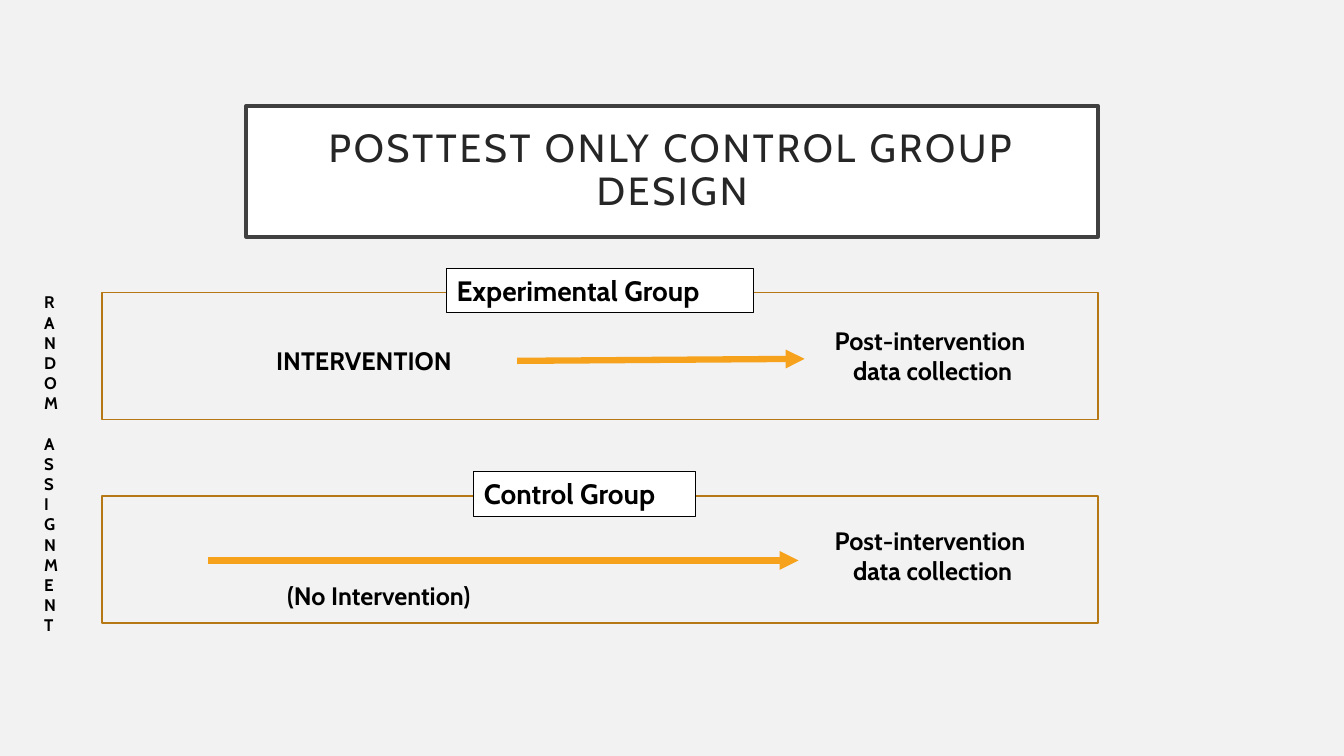
from lxml.etree import SubElement
from pptx import Presentation
from pptx.dml.color import RGBColor
from pptx.enum.shapes import MSO_CONNECTOR, MSO_SHAPE
from pptx.enum.text import MSO_ANCHOR, MSO_AUTO_SIZE, PP_ALIGN
from pptx.oxml.ns import qn
from pptx.util import Inches, Pt

BODY = {"name": "Cabin", "size": Pt(18), "bold": True}
LABEL = {**BODY, "size": Pt(20)}
SIDE = {**BODY, "size": Pt(12)}
TITLE = {"name": "Cabin", "size": Pt(28), "bold": False}


def color(value):
    return RGBColor.from_string(value)


def style_text(paragraph, formats, text_color="000000"):
    for run in paragraph.runs:
        for name, value in formats.items():
            setattr(run.font, name, value)
        run.font.color.rgb = color(text_color)


def style_shape(shape, fill, line, width):
    if fill:
        shape.fill.solid()
        shape.fill.fore_color.rgb = color(fill)
    else:
        shape.fill.background()
    shape.line.color.rgb = color(line)
    shape.line.width = Pt(width)
    shape.shadow.inherit = False


def write_lines(shape, lines, formats):
    frame = shape.text_frame
    frame.word_wrap = True
    frame.vertical_anchor = MSO_ANCHOR.TOP
    frame.text = "\n".join(lines)
    for paragraph in frame.paragraphs:
        paragraph.alignment = PP_ALIGN.LEFT
        style_text(paragraph, formats)
    return frame


def add_text(slide, box, lines, formats=BODY):
    shape = slide.shapes.add_textbox(*map(Inches, box))
    return write_lines(shape, lines, formats)


def add_rectangle(slide, box, fill, line, width):
    shape = slide.shapes.add_shape(MSO_SHAPE.RECTANGLE, *map(Inches, box))
    style_shape(shape, fill, line, width)
    return shape


def add_arrow(slide, start, end):
    arrow = slide.shapes.add_connector(
        MSO_CONNECTOR.STRAIGHT, *map(Inches, start + end))
    arrow.line.color.rgb = color("F6A21D")
    arrow.line.width = Pt(4.5)
    SubElement(arrow.line._get_or_add_ln(), qn("a:tailEnd"), type="triangle")
    SubElement(arrow._element.spPr, qn("a:effectLst"))


def add_title(slide, box, text):
    title = slide.shapes.title
    title.left, title.top, title.width, title.height = map(Inches, box)
    style_shape(title, "FFFFFF", "404040", 2.5)
    frame = title.text_frame
    frame.text = text
    settings = {"word_wrap": True, "auto_size": MSO_AUTO_SIZE.NONE,
                "vertical_anchor": MSO_ANCHOR.MIDDLE}
    for side in ("left", "top", "right", "bottom"):
        settings[f"margin_{side}"] = Inches(0.2)
    for name, value in settings.items():
        setattr(frame, name, value)
    paragraph = frame.paragraphs[0]
    paragraph.alignment = PP_ALIGN.CENTER
    paragraph.line_spacing = 0.9
    style_text(paragraph, TITLE, "262626")
    paragraph.runs[0].font._element.set("spc", "200")


def add_group(slide, box, label, label_span, treatment, treatment_at,
              arrow_start, arrow_end, outcome_top):
    """Place a framed study group; inner positions are offsets from the box."""
    left, top, width, height = box
    add_rectangle(slide, box, None, "B67815", 1)

    # Treatment, arrow and outcome
    x, y = treatment_at
    add_text(slide, (left + x, top + y, 2.4, 0.4), [treatment])
    start, end = [(left + x, top + y) for x, y in (arrow_start, arrow_end)]
    add_arrow(slide, start, end)
    outcome = add_text(slide, (left + 7.17, top + outcome_top, 2.14, 0.71),
                       ["Post-intervention", "data collection"])
    outcome.paragraphs[1].alignment = PP_ALIGN.CENTER

    # Label across the top edge
    x, label_width = label_span
    tag = add_rectangle(slide, (left + x, top - 0.24, label_width, 0.44),
                        "FFFFFF", "000000", 0.75)
    write_lines(tag, [label], LABEL)


def add_side_text(slide, box, words):
    frame = add_text(slide, box, list("".join(words)), SIDE)
    # One line of space between the two words
    frame.paragraphs[len(words[0])].space_before = Pt(14.5)


def main():
    presentation = Presentation()
    presentation.slide_width = Inches(13.33)
    presentation.slide_height = Inches(7.5)
    slide = presentation.slides.add_slide(presentation.slide_layouts[5])
    slide.background.fill.solid()
    slide.background.fill.fore_color.rgb = color("F2F2F2")

    add_title(slide, (2.44, 1.05, 8.45, 1.3),
              "POSTTEST ONLY CONTROL GROUP DESIGN")
    add_group(slide, (1.01, 2.9, 9.88, 1.26), "Experimental Group",
              (3.42, 3.04), "INTERVENTION", (1.63, 0.48),
              (4.12, 0.68), (6.97, 0.66), 0.28)
    add_group(slide, (1.01, 4.92, 9.88, 1.26), "Control Group",
              (3.69, 2.2), "(No Intervention)", (1.74, 0.79),
              (1.05, 0.64), (6.91, 0.64), 0.24)
    add_side_text(slide, (0.34, 2.85, 0.6, 3.53), ("RANDOM", "ASSIGNMENT"))

    presentation.save("out.pptx")


if __name__ == "__main__":
    main()
